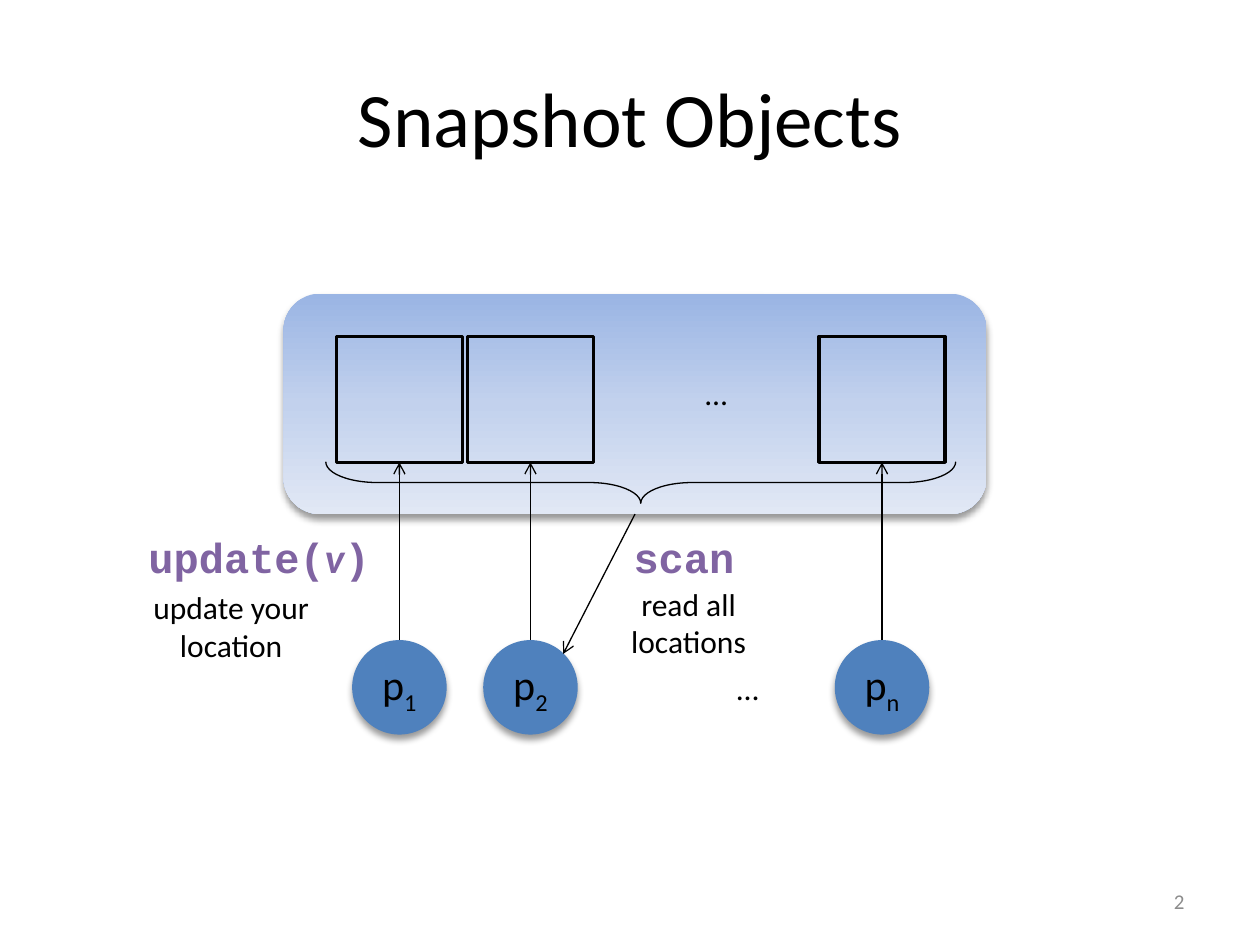
import copy

import lxml.etree
import pptx
import pptx.dml.color
import pptx.enum.shapes
import pptx.enum.text
import pptx.oxml.ns
import pptx.util

Inches = pptx.util.Inches
Pt = pptx.util.Pt
SHAPE = pptx.enum.shapes.MSO_SHAPE
ALIGN = pptx.enum.text.PP_ALIGN
ANCHOR = pptx.enum.text.MSO_ANCHOR
qn = pptx.oxml.ns.qn

THEME = {
    "body_font": "Calibri", "code_font": "Courier New",
    "ink": "000000", "code": "8064A2", "process": "4F81BD", "muted": "8C8C8C",
    "panel": [(0, "9AB5E4"), (0.5, "C2D1ED"), (1, "E1E8F5")],
    "title_size": 44, "large": 24, "body": 18, "small": 12,
    "thick": 2, "thin": 0.75,
}

TITLE = "Snapshot Objects"
PROCESSES = [("1", 3.17), ("2", 4.21), ("n", 7)]
CELL_TOP, CELL_SIZE = 2.67, 1
CIRCLE_TOP, CIRCLE_SIZE = 5.08, 0.75
PANEL = (2.25, 2.33, 5.58, 1.75)
BRACE = (4.92, 1.33, 0.33, 5)
SCAN_ARROW = (4.47, 5.19, 5.04, 4.08)
ELLIPSES = [(5.5, 2.92, 0.45, 0.4), (5.75, 5.26, 0.45, 0.4)]
OPERATIONS = [
    ((1.08, 4.17, 2, 0.5), [("update(", "code"), ("v", "variable"), (")", "code")]),
    ((4.93, 4.17, 2, 0.5), [("scan", "code")]),
]
CAPTIONS = [
    ((0.92, 4.51, 1.83, 0.92), "update your location"),
    ((4.55, 4.48, 1.83, 0.92), "read all locations"),
]
PAGE_NUMBER = ((7.17, 6.95, 2.33, 0.4), "2")


def color(name):
    return pptx.dml.color.RGBColor.from_string(THEME.get(name, name))


def add_span(para, text, size="body", ink="ink", font="body_font", bold=None, italic=None):
    span = para.add_run()
    span.text = text
    span.font.name = THEME[font]
    span.font.size = Pt(THEME[size])
    span.font.color.rgb = color(ink)
    span.font.bold = bold
    span.font.italic = italic
    return span


def add_label(page, place, align=ALIGN.LEFT, anchor=ANCHOR.TOP, wrap=True):
    frame = page.shapes.add_textbox(*map(Inches, place)).text_frame
    frame.word_wrap = wrap
    frame.vertical_anchor = anchor
    frame.paragraphs[0].alignment = align
    return frame.paragraphs[0]


def add_figure(page, kind, place, line=None):
    shape = page.shapes.add_shape(kind, *map(Inches, place))
    shape.shadow.inherit = False
    shape.fill.background()
    if line:
        shape.line.color.rgb = color("ink")
        shape.line.width = Pt(THEME[line])
    else:
        shape.line.fill.background()
    return shape


def add_shadow(shape):
    effects = shape._element.spPr.find(qn("a:effectLst"))
    shadow = lxml.etree.SubElement(
        effects, qn("a:outerShdw"), blurRad=str(Pt(4)), dist=str(Pt(3)),
        dir="5400000", rotWithShape="0")
    black = lxml.etree.SubElement(shadow, qn("a:srgbClr"), val=THEME["ink"])
    lxml.etree.SubElement(black, qn("a:alpha"), val="40000")


def add_arrow(page, ends, arrow_end):
    arrow = page.shapes.add_connector(
        pptx.enum.shapes.MSO_CONNECTOR.STRAIGHT, *map(Inches, ends))
    arrow.line.color.rgb = color("ink")
    arrow.line.width = Pt(THEME["thin"])
    lxml.etree.SubElement(arrow.line._get_or_add_ln(), qn(arrow_end), type="arrow")
    lxml.etree.SubElement(arrow._element.spPr, qn("a:effectLst"))
    return arrow


def add_panel(page):
    panel = add_figure(page, SHAPE.ROUNDED_RECTANGLE, PANEL)
    panel.fill.gradient()
    panel.fill.gradient_angle = 270
    stop_list = panel._element.spPr.find(".//" + qn("a:gsLst"))
    stop_list.insert(1, copy.deepcopy(stop_list[0]))
    for stop, (position, shade) in zip(panel.fill.gradient_stops, THEME["panel"]):
        stop.position = position
        stop.color.rgb = color(shade)
    add_shadow(panel)


def add_process(page, name, center):
    circle = add_figure(page, SHAPE.OVAL, (
        center - CIRCLE_SIZE / 2, CIRCLE_TOP, CIRCLE_SIZE, CIRCLE_SIZE))
    circle.fill.solid()
    circle.fill.fore_color.rgb = color("process")
    add_shadow(circle)
    frame = circle.text_frame
    frame.vertical_anchor = ANCHOR.MIDDLE
    para = frame.paragraphs[0]
    para.alignment = ALIGN.CENTER
    add_span(para, "p", "large")
    subscript = add_span(para, name, "large")
    subscript.font._element.set("baseline", "-25000")

    cell = add_figure(page, SHAPE.RECTANGLE, (
        center - CELL_SIZE / 2, CELL_TOP, CELL_SIZE, CELL_SIZE), "thick")
    arrow = add_arrow(page, (center, CIRCLE_TOP, center, CELL_TOP + CELL_SIZE), "a:tailEnd")
    arrow.begin_connect(circle, 0)
    arrow.end_connect(cell, 2)


def main():
    deck = pptx.Presentation()
    deck.slide_width, deck.slide_height = Inches(10), Inches(7.5)
    page = deck.slides.add_slide(deck.slide_layouts[5])

    title = page.shapes.title
    title.left, title.top, title.width, title.height = map(Inches, (0.5, 0.3, 9, 1.25))
    title.text_frame.vertical_anchor = ANCHOR.MIDDLE
    heading = title.text_frame.paragraphs[0]
    heading.alignment = ALIGN.CENTER
    add_span(heading, TITLE, "title_size")

    add_panel(page)
    for name, center in PROCESSES:
        add_process(page, name, center)
    for place in ELLIPSES:
        add_span(add_label(page, place, wrap=False), "…")

    add_arrow(page, SCAN_ARROW, "a:headEnd")
    brace = add_figure(page, SHAPE.RIGHT_BRACE, BRACE, "thin")
    brace.rotation = 90
    brace.adjustments[0] = 1.24
    brace.adjustments[1] = 0.5

    for place, parts in OPERATIONS:
        para = add_label(page, place)
        for text, role in parts:
            variable = role == "variable"
            add_span(para, text, "large", "code",
                     "body_font" if variable else "code_font", True, variable)
    for place, text in CAPTIONS:
        add_span(add_label(page, place, ALIGN.CENTER, ANCHOR.MIDDLE), text)
    place, number = PAGE_NUMBER
    add_span(add_label(page, place, ALIGN.RIGHT, ANCHOR.MIDDLE), number, "small", "muted")

    deck.save("out.pptx")


if __name__ == "__main__":
    main()
